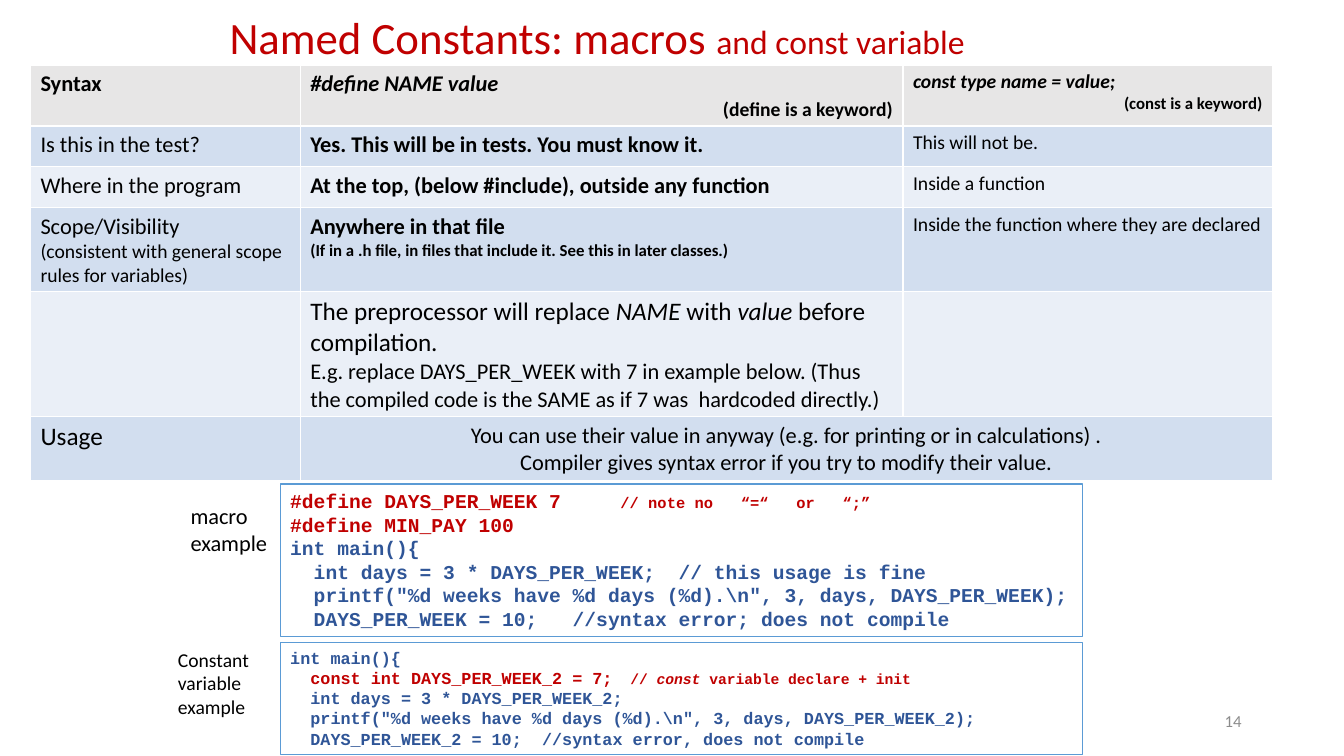
from pptx import Presentation
from pptx.dml.color import RGBColor
from pptx.enum.shapes import MSO_SHAPE
from pptx.enum.text import MSO_ANCHOR, MSO_AUTO_SIZE, PP_ALIGN
from pptx.util import Emu, Pt

PX = 9525  # EMU in one px, 96 px to the inch
COLORS = {
    "red": "C00000", "blue": "2F5597", "outline": "5B9BD5", "black": "000000",
    "gray": "8C8C8C", "header": "E7E6E6", "band": "D2DEEF", "pale": "EAEFF7",
}
BODY, CODE = "Calibri", "Courier New"


def px(*lengths):
    return [Emu(length * PX) for length in lengths]


def rgb(name):
    return RGBColor.from_string(COLORS[name])


def style_font(font, name=None, size=None, color=None, bold=None, italic=None):
    if name:
        font.name = name
    if size:
        font.size = Pt(size)
    if color:
        font.color.rgb = rgb(color)
    if bold is not None:
        font.bold = bold
    if italic is not None:
        font.italic = italic


def line(*runs, align=PP_ALIGN.LEFT, **style):
    """One paragraph: runs are strings, or (string, style) where they differ."""
    return runs, align, style


def write_lines(frame, lines, **base):
    for index, (runs, align, style) in enumerate(lines):
        paragraph = frame.paragraphs[0] if index == 0 else frame.add_paragraph()
        paragraph.alignment = align
        style_font(paragraph.font, **{**base, **style})
        for item in runs:
            text, changes = (item, {}) if isinstance(item, str) else item
            run = paragraph.add_run()
            run.text = text
            style_font(run.font, **changes)


def add_title(slide, box, *runs):
    title = slide.shapes.title
    title.left, title.top, title.width, title.height = px(*box)
    frame = title.text_frame
    frame.auto_size = MSO_AUTO_SIZE.NONE
    frame.vertical_anchor = MSO_ANCHOR.MIDDLE
    write_lines(frame, [line(*runs)], name=BODY, size=32, color="red")
    frame.paragraphs[0].line_spacing = 0.9


def add_label(slide, box, lines, size, color="black", wrap=True, anchor=MSO_ANCHOR.TOP):
    frame = slide.shapes.add_textbox(*px(*box)).text_frame
    frame.word_wrap = wrap
    frame.vertical_anchor = anchor
    write_lines(frame, lines, name=BODY, size=size, color=color)


def add_code(slide, box, lines, size):
    shape = slide.shapes.add_shape(MSO_SHAPE.RECTANGLE, *px(*box))
    shape.shadow.inherit = False
    shape.fill.background()
    shape.line.color.rgb = rgb("outline")
    shape.line.width = Pt(0.75)
    frame = shape.text_frame
    frame.word_wrap = True
    frame.auto_size = MSO_AUTO_SIZE.SHAPE_TO_FIT_TEXT
    frame.vertical_anchor = MSO_ANCHOR.TOP
    write_lines(frame, lines, name=CODE, size=size, color="blue", bold=True)


def add_comparison(slide, left, top, widths, heights, rows):
    table = slide.shapes.add_table(
        len(heights), len(widths), *px(left, top, sum(widths), sum(heights))).table
    for column, width in zip(table.columns, px(*widths)):
        column.width = width
    for row, height in zip(table.rows, px(*heights)):
        row.height = height
    for row_index, cells in enumerate(rows):
        fill = "header" if row_index == 0 else ("pale", "band")[row_index % 2]
        for column_index, lines in enumerate(cells):
            cell = table.cell(row_index, column_index)
            cell.fill.solid()
            cell.fill.fore_color.rgb = rgb(fill)
            write_lines(cell.text_frame, lines, name=BODY, size=16,
                        color="black", bold=row_index == 0)
    return table


def main():
    presentation = Presentation()
    presentation.slide_width, presentation.slide_height = px(1280, 720)
    slide = presentation.slides.add_slide(presentation.slide_layouts[5])

    add_title(slide, (209, 14, 815, 48),
              "Named Constants: macros ", ("and const variable", {"size": 24}))
    add_label(slide, (904, 667, 288, 38), [line("14", align=PP_ALIGN.RIGHT)],
              12, "gray", anchor=MSO_ANCHOR.MIDDLE)

    # Code with const variable
    add_code(slide, (267, 612, 764, 107), [
        line("int main(){"),
        line("  const int DAYS_PER_WEEK_2 = 7;", ("  // ", {"size": 10.5}),
             ("const", {"size": 10.5, "italic": True}),
             (" variable declare + init", {"size": 10.5}), color="red"),
        line("  int days = 3 * DAYS_PER_WEEK_2;"),
        line('  printf("%d weeks have %d days (%d).\\n", 3, days, DAYS_PER_WEEK_2);'),
        line("  DAYS_PER_WEEK_2 = 10;  //syntax error, does not compile"),
    ], 12)

    # Table: macro against const variable
    italic = {"italic": True}
    table = add_comparison(slide, 29, 62, (257, 574, 352), (58, 39, 39, 80, 119, 60), [
        ([line("Syntax")],
         [line("#define NAME value", italic=True),
          line("(define is a keyword)", size=14, align=PP_ALIGN.RIGHT)],
         [line("const type name = value;", size=14, italic=True),
          line("(const is a keyword)", size=12, align=PP_ALIGN.RIGHT)]),
        ([line("Is this in the test?")],
         [line("Yes. This will be in tests. You must know it.", bold=True)],
         [line("This will not be.", size=14)]),
        ([line("Where in the program")],
         [line("At the top, (below #include), outside any function", bold=True)],
         [line("Inside a function", size=14)]),
        ([line("Scope/Visibility"),
          line("(consistent with general scope rules for variables)", size=14)],
         [line("Anywhere in that file", bold=True),
          line("(If in a .h file, in files that include it. See this in later classes.)",
               size=12, bold=True)],
         [line("Inside the function where they are declared", size=14)]),
        ([],
         [line("The preprocessor will replace ", ("NAME", italic), " with ",
               ("value", italic), " before compilation.", size=18),
          line("E.g. replace DAYS_PER_WEEK with 7 in example below. (Thus the compiled "
               "code is the SAME as if 7 was  hardcoded directly.)")],
         []),
        ([line("Usage", size=18)],
         [line("You can use their value in anyway (e.g. for printing or in calculations) .",
               align=PP_ALIGN.CENTER),
          line("Compiler gives syntax error if you try to modify their value.",
               align=PP_ALIGN.CENTER)],
         []),
    ])
    table.cell(5, 1).merge(table.cell(5, 2))

    # Code with macros
    add_code(slide, (267, 461, 764, 145), [
        line("#define DAYS_PER_WEEK 7     ",
             ("// note no   “=“   or   “;”", {"size": 11}), color="red"),
        line("#define MIN_PAY 100", color="red"),
        line("int main(){"),
        line("  int days = 3 * DAYS_PER_WEEK;  // this usage is fine"),
        line('  printf("%d weeks have %d days (%d).\\n", 3, days, DAYS_PER_WEEK);'),
        line("  DAYS_PER_WEEK = 10;   //syntax error; does not compile"),
    ], 14)

    # Labels of the two examples
    add_label(slide, (172, 474, 93, 61), [line("macro"), line("example")], 16, wrap=False)
    add_label(slide, (160, 612, 107, 78),
              [line("Constant variable"), line("example")], 14)
    presentation.save("out.pptx")


if __name__ == "__main__":
    main()
